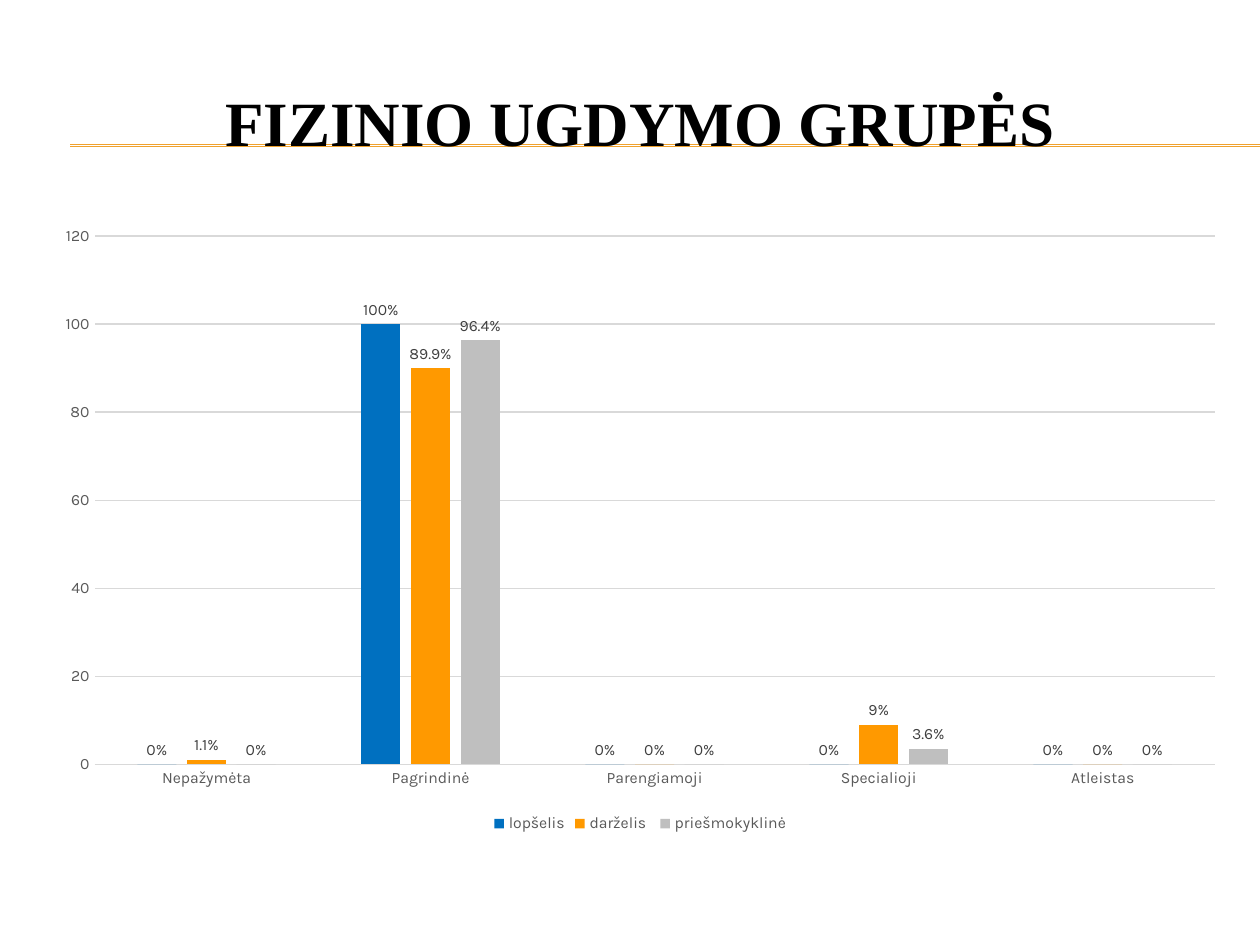
from lxml.etree import SubElement
from pptx import Presentation
from pptx.chart.data import CategoryChartData
from pptx.dml.color import RGBColor
from pptx.enum.chart import XL_CHART_TYPE, XL_LABEL_POSITION, XL_LEGEND_POSITION, XL_TICK_MARK
from pptx.enum.shapes import MSO_CONNECTOR
from pptx.enum.text import MSO_ANCHOR, PP_ALIGN
from pptx.oxml.ns import qn
from pptx.util import Cm, Pt

COLORS = {
    "rule": "F0A22E",
    "title": "000000",
    "axis_text": "595959",
    "label_text": "404040",
    "grid": "D9D9D9",
}
CATEGORIES = ["Nepažymėta", "Pagrindinė", "Parengiamoji", "Specialioji", "Atleistas"]
SERIES = [
    ("lopšelis", "0070C0", (0, 100, 0, 0, 0)),
    ("darželis ", "FF9900", (1.1, 89.9, 0, 9, 0)),
    ("priešmokyklinė", "BFBFBF", (0, 96.4, 0, 3.6, 0)),
]
LEFT, WIDTH = Cm(0.84), Cm(24.13)


def color(name):
    return RGBColor.from_string(COLORS[name])


def style_font(font, name, size, color_name, bold=False):
    font.name = name
    font.size = Pt(size)
    font.bold = bold
    font.color.rgb = color(color_name)


def style_line(line, color_name):
    line.color.rgb = color(color_name)
    line.width = Pt(0.75)


def add_rule(page, y):
    rule = page.shapes.add_connector(MSO_CONNECTOR.STRAIGHT, Cm(1.42), y, Cm(25.4), y)
    style_line(rule.line, "rule")
    SubElement(rule._element.spPr, qn("a:effectLst"))


def add_title(page, text):
    box = page.shapes.add_textbox(LEFT, Cm(1.27), WIDTH, Cm(2.34))
    frame = box.text_frame
    frame.word_wrap = True
    frame.vertical_anchor = MSO_ANCHOR.MIDDLE
    frame.text = text
    para = frame.paragraphs[0]
    para.alignment = PP_ALIGN.CENTER
    style_font(para.runs[0].font, "Times New Roman", 36, "title", bold=True)


def style_axis(axis):
    axis.major_tick_mark = XL_TICK_MARK.NONE
    axis.minor_tick_mark = XL_TICK_MARK.NONE
    style_font(axis.tick_labels.font, "Karla", 9, "axis_text")


def style_series(series, fill):
    series.format.fill.solid()
    series.format.fill.fore_color.rgb = RGBColor.from_string(fill)
    series.invert_if_negative = False
    labels = series.data_labels
    labels.show_value = True
    labels.position = XL_LABEL_POSITION.OUTSIDE_END
    labels.number_format = 'General"%"'
    labels.number_format_is_linked = False
    style_font(labels.font, "Karla", 9, "label_text")


def add_column_chart(page):
    data = CategoryChartData()
    data.categories = CATEGORIES
    for name, _, values in SERIES:
        data.add_series(name, values)
    chart = page.shapes.add_chart(
        XL_CHART_TYPE.COLUMN_CLUSTERED, LEFT, Cm(4.32), WIDTH, Cm(12.57), data
    ).chart
    chart.has_title = False
    style_font(chart.font, "Karla", 10, "title")

    chart.has_legend = True
    chart.legend.position = XL_LEGEND_POSITION.BOTTOM
    chart.legend.include_in_layout = False
    style_font(chart.legend.font, "Karla", 9, "axis_text")

    style_axis(chart.category_axis)
    style_line(chart.category_axis.format.line, "grid")
    values_axis = chart.value_axis
    style_axis(values_axis)
    values_axis.minimum_scale = 0
    values_axis.maximum_scale = 120
    values_axis.major_unit = 20
    values_axis.format.line.fill.background()
    style_line(values_axis.major_gridlines.format.line, "grid")

    plot = chart.plots[0]
    plot.vary_by_categories = False
    plot.gap_width = 219
    plot.overlap = -27
    for series, (_, fill, _) in zip(plot.series, SERIES):
        style_series(series, fill)


def main():
    deck = Presentation()
    deck.slide_width, deck.slide_height = Cm(25.4), Cm(19.05)
    page = deck.slides.add_slide(deck.slide_layouts[6])
    for y in (Cm(2.92), Cm(2.95)):
        add_rule(page, y)
    add_title(page, "FIZINIO UGDYMO GRUPĖS")
    add_column_chart(page)
    deck.save("out.pptx")


if __name__ == "__main__":
    main()
